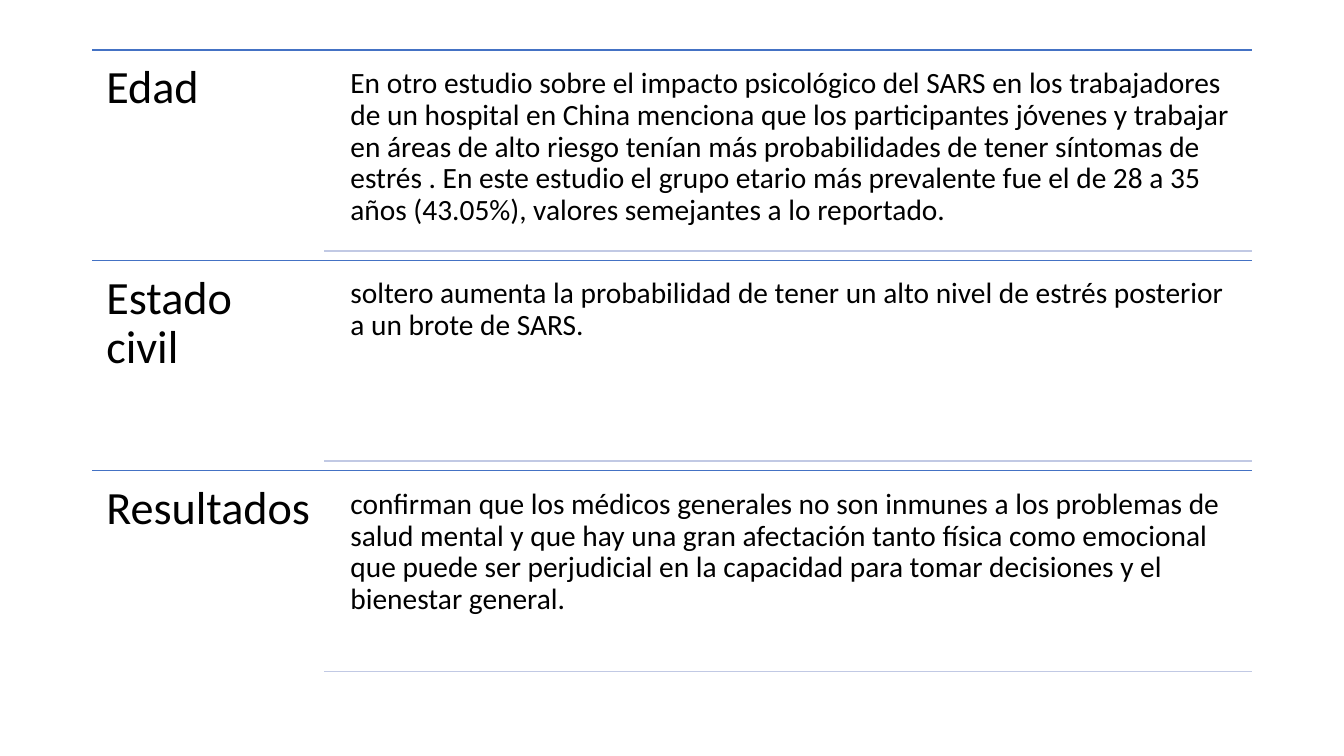
import pptx
import pptx.util
import pptx.dml.color
import pptx.enum.shapes
import pptx.enum.text
import pptx.oxml.ns
import lxml.etree

Cm = pptx.util.Cm
Pt = pptx.util.Pt

ROWS = [
    ("Edad",
     "En otro estudio sobre el impacto psicológico del SARS en los trabajadores "
     "de un hospital en China menciona que los participantes jóvenes y trabajar "
     "en áreas de alto riesgo tenían más probabilidades de tener síntomas de "
     "estrés . En este estudio el grupo etario más prevalente fue el de 28 a 35 "
     "años (43.05%), valores semejantes a lo reportado."),
    ("Estado civil",
     "soltero aumenta la probabilidad de tener un alto nivel de estrés posterior "
     "a un brote de SARS."),
    ("Resultados",
     "confirman que los médicos generales no son inmunes a los problemas de "
     "salud mental y que hay una gran afectación tanto física como emocional "
     "que puede ser perjudicial en la capacidad para tomar decisiones y el "
     "bienestar general."),
]


def color(code):
    return pptx.dml.color.RGBColor.from_string(code)


def add_text(slide, text, left, top, width, height, size, inset, ink="000000"):
    box = slide.shapes.add_textbox(Cm(left), Cm(top), Cm(width), Cm(height))
    frame = box.text_frame
    frame.word_wrap = True
    frame.vertical_anchor = pptx.enum.text.MSO_ANCHOR.TOP
    frame.margin_left = frame.margin_right = Cm(inset)
    frame.margin_top = frame.margin_bottom = Cm(inset)
    para = frame.paragraphs[0]
    para.line_spacing = 0.9
    run = para.add_run()
    run.text = text
    run.font.name = "Calibri"
    run.font.size = Pt(size)
    run.font.color.rgb = color(ink)


def add_rule(slide, left, right, top, ink):
    rule = slide.shapes.add_connector(
        pptx.enum.shapes.MSO_CONNECTOR.STRAIGHT,
        Cm(left), Cm(top), Cm(right), Cm(top))
    rule.line.color.rgb = color(ink)
    rule.line.width = Pt(1)
    lxml.etree.SubElement(rule._element.spPr, pptx.oxml.ns.qn("a:effectLst"))


def add_row(slide, label, body, left, top, width, height):
    side = width / 5
    gap = 0.24
    indent = side + 0.44
    right = left + width
    add_rule(slide, left, right, top, "4472C4")
    add_text(slide, label, left, top, side, height, size=33, inset=0.35)
    add_text(slide, body, left + indent, top + gap, width - indent,
             height - 2 * gap, size=21, inset=0.22)
    add_rule(slide, left + side, right, top + height - gap, "C1C9E4")


def add_list(slide, rows, left, top, width, height):
    step = height / len(rows)
    for index, (label, body) in enumerate(rows):
        add_row(slide, label, body, left, top + index * step, width, step)


def main():
    deck = pptx.Presentation()
    deck.slide_width = Cm(33.87)
    deck.slide_height = Cm(19.05)
    slide = deck.slides.add_slide(deck.slide_layouts[6])
    add_list(slide, ROWS, left=2.33, top=1.26, width=29.21, height=15.9)
    deck.save("out.pptx")


if __name__ == "__main__":
    main()
